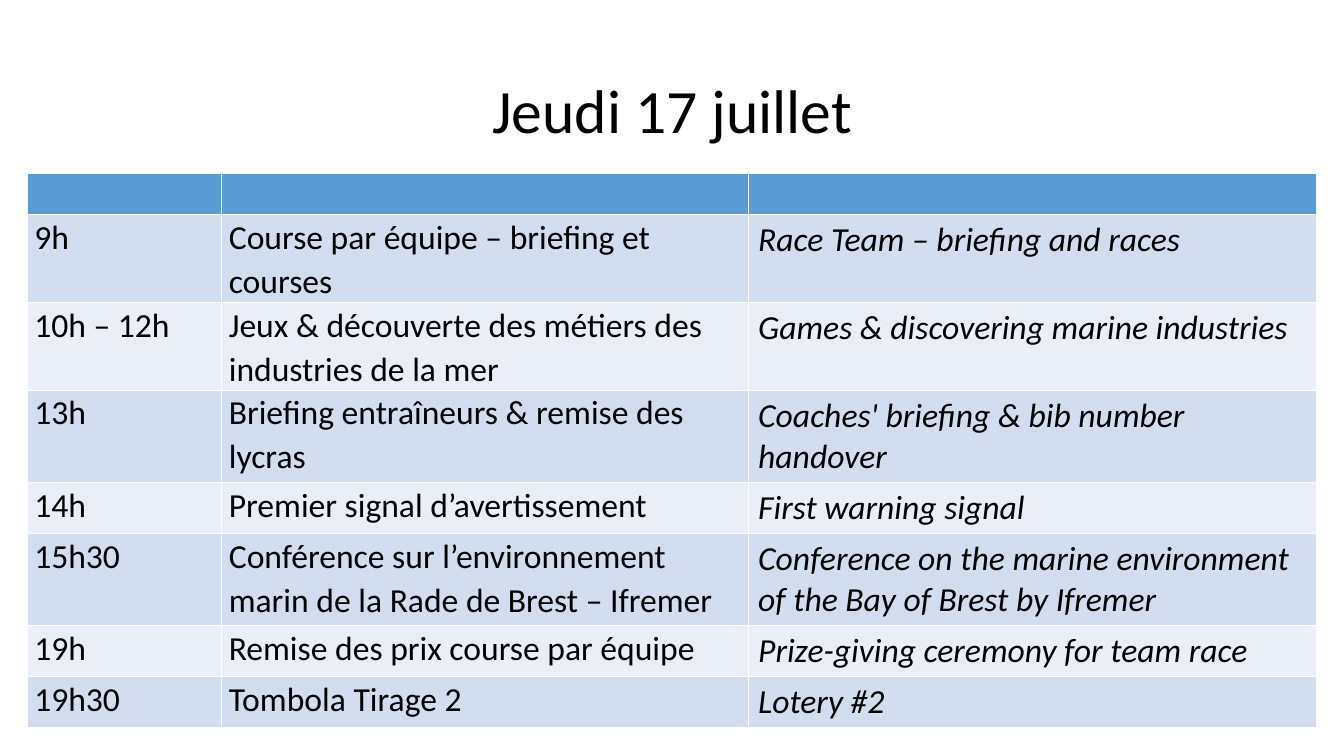
from pptx import Presentation
from pptx.dml.color import RGBColor
from pptx.enum import text
from pptx.util import Inches, Pt

COLORS = {"ink": "000000", "header": "5B9BD5", "odd": "D2DEEF", "even": "EAEFF7"}
COLUMN_WIDTHS = [1.93, 5.22, 5.64]
ROW_HEIGHT = 0.41
PROGRAMME = [
    ("9h", "Course par équipe – briefing et courses", "Race Team – briefing and races"),
    ("10h – 12h", "Jeux & découverte des métiers des industries de la mer",
     "Games & discovering marine industries"),
    ("13h", "Briefing entraîneurs & remise des lycras",
     "Coaches' briefing & bib number handover"),
    ("14h", "Premier signal d’avertissement", "First warning signal"),
    ("15h30", "Conférence sur l’environnement marin de la Rade de Brest – Ifremer",
     "Conference on the marine environment of the Bay of Brest by Ifremer"),
    ("19h", "Remise des prix course par équipe", "Prize-giving ceremony for team race"),
    ("19h30", "Tombola Tirage 2", "Lotery #2"),
]


class ProgrammePage:
    font_name = "Calibri"

    def __init__(self, deck):
        self.page = deck.slides.add_slide(deck.slide_layouts[5])

    def style(self, para, size, spacing, italic=False):
        para.line_spacing = spacing
        font = para.font
        font.name, font.size, font.italic = self.font_name, Pt(size), italic
        font.color.rgb = RGBColor.from_string(COLORS["ink"])

    def title(self, wording, left, top, width, height):
        box = self.page.shapes.title
        box.left, box.top = Inches(left), Inches(top)
        box.width, box.height = Inches(width), Inches(height)
        frame = box.text_frame
        frame.text = wording
        frame.vertical_anchor = text.MSO_ANCHOR.MIDDLE
        para = frame.paragraphs[0]
        para.alignment = text.PP_ALIGN.CENTER
        self.style(para, 44, 0.9)

    def fill(self, cell, color):
        cell.fill.solid()
        cell.fill.fore_color.rgb = RGBColor.from_string(COLORS[color])

    def schedule(self, events, left, top):
        """Add a blank header and one row per event: time, French, English in italics."""
        row_count = len(events) + 1
        table = self.page.shapes.add_table(
            row_count, len(COLUMN_WIDTHS), Inches(left), Inches(top),
            Inches(sum(COLUMN_WIDTHS)), Inches(ROW_HEIGHT * row_count)).table
        for column, width in zip(table.columns, COLUMN_WIDTHS):
            column.width = Inches(width)
        for row in table.rows:
            row.height = Inches(ROW_HEIGHT)
        for cell in table.rows[0].cells:
            self.fill(cell, "header")
        for number, event in enumerate(events, 1):
            for column, wording in enumerate(event):
                cell = table.cell(number, column)
                self.fill(cell, "odd" if number % 2 else "even")
                cell.text = wording
                english = column == 2
                self.style(cell.text_frame.paragraphs[0], 24,
                           1.0 if english else 1.07, english)
                if not english:
                    cell.margin_left = cell.margin_right = Inches(0.07)
                    cell.margin_top = cell.margin_bottom = 0


def main():
    deck = Presentation()
    deck.slide_width, deck.slide_height = Inches(13.33), Inches(7.5)
    page = ProgrammePage(deck)
    page.title("Jeudi 17 juillet", 0.92, 0.4, 11.5, 1.45)
    page.schedule(PROGRAMME, 0.27, 1.72)
    deck.save("out.pptx")


if __name__ == "__main__":
    main()
